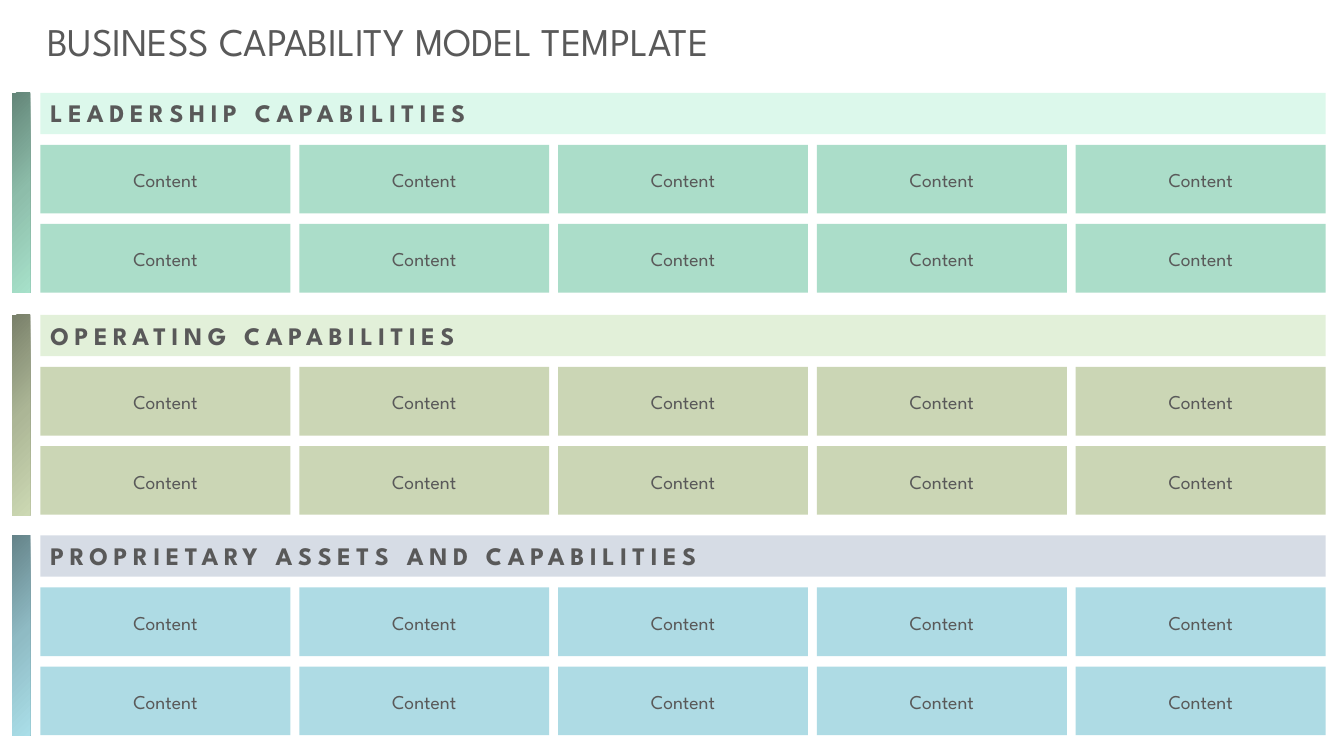
from lxml.etree import SubElement
from pptx import Presentation
from pptx.dml.color import RGBColor
from pptx.enum.shapes import MSO_SHAPE as Preset
from pptx.enum.text import MSO_ANCHOR as Anchor, PP_ALIGN as Align
from pptx.oxml.ns import qn
from pptx.util import Pt

FONT = "League Spartan"
TEXT_COLOR = "595959"
COLUMNS, ROWS = 5, 2
CELL_WIDTH, CELL_HEIGHT = 178.5, 49
ROW_PITCH = 56.5
HEADER_HEIGHT, CELLS_OFFSET = 29.5, 37.2
SECTION_LEFT, SECTION_WIDTH, SECTION_HEIGHT = 28.9, 918, 143
BAR_WIDTH, BAR_GAP = 13, 7.3

# Title, top, header fill, cell fill, gradient of the side bar
SECTIONS = [
    ("LEADERSHIP CAPABILITIES", 66.3, "DCF8EB", "ABDDC9",
     ("638578", "8DBDAA", "A7E1CA")),
    ("OPERATING CAPABILITIES", 224.9, "E2F0D9", "CBD6B5",
     ("79806A", "ACB696", "CCD8B3")),
    ("PROPRIETARY ASSETS AND CAPABILITIES", 382.4, "D6DCE5", "AEDBE4",
     ("658389", "8FBBC4", "AADEE8")),
]


def color(hex_string):
    return RGBColor.from_string(hex_string)


def write_text(shape, text, size, bold=False, letter_spacing=0,
               align=Align.LEFT, anchor=Anchor.MIDDLE):
    frame = shape.text_frame
    frame.word_wrap = True
    frame.vertical_anchor = anchor
    paragraph = frame.paragraphs[0]
    paragraph.alignment = align
    run = paragraph.add_run()
    run.text = text
    run.font.name = FONT
    run.font.size = Pt(size)
    run.font.bold = bold
    run.font.color.rgb = color(TEXT_COLOR)
    if letter_spacing:
        run.font._element.set("spc", str(letter_spacing * 100))
    return paragraph


def add_text_box(slide, left, top, width, height, text, size, **text_format):
    box = slide.shapes.add_textbox(Pt(left), Pt(top), Pt(width), Pt(height))
    write_text(box, text, size, anchor=Anchor.TOP, **text_format)


def add_rectangle(slide, left, top, width, height, fill=None):
    shape = slide.shapes.add_shape(
        Preset.RECTANGLE, Pt(left), Pt(top), Pt(width), Pt(height))
    shape.shadow.inherit = False
    shape.line.fill.background()
    if fill:
        shape.fill.solid()
        shape.fill.fore_color.rgb = color(fill)
    return shape


def add_gradient_bar(slide, left, top, width, height, stops):
    bar = add_rectangle(slide, left, top, width, height)
    bar.fill.gradient()
    bar.fill.gradient_angle = 315
    stop_list = next(bar._element.iter(qn("a:gsLst")))
    for stop in list(stop_list):
        stop_list.remove(stop)
    for index, hex_string in enumerate(stops):
        position = 100000 * index // (len(stops) - 1)
        stop = SubElement(stop_list, qn("a:gs"), pos=str(position))
        SubElement(stop, qn("a:srgbClr"), val=hex_string)


def add_cells(slide, left, top, width, fill):
    column_pitch = (width - CELL_WIDTH) / (COLUMNS - 1)
    for row in range(ROWS):
        for column in range(COLUMNS):
            cell = add_rectangle(
                slide, left + column * column_pitch, top + row * ROW_PITCH,
                CELL_WIDTH, CELL_HEIGHT, fill)
            paragraph = write_text(cell, "Content", 14, align=Align.CENTER)
            paragraph.line_spacing = 1.07
            paragraph.space_after = Pt(8)


def add_section(slide, left, top, width, height, title, header_fill,
                cell_fill, stops):
    # Side bar
    add_gradient_bar(slide, left - BAR_GAP - BAR_WIDTH, top,
                     BAR_WIDTH, height, stops)
    # Header band with its title
    add_rectangle(slide, left, top, width, HEADER_HEIGHT, header_fill)
    add_text_box(slide, left, top, width, HEADER_HEIGHT, title, 18,
                 bold=True, letter_spacing=4)
    # Grid of capabilities
    add_cells(slide, left, top + CELLS_OFFSET, width, cell_fill)


def build_capability_slide(presentation):
    slide = presentation.slides.add_slide(presentation.slide_layouts[6])
    add_text_box(slide, 26.6, 8.6, 918, 41,
                 "BUSINESS CAPABILITY MODEL TEMPLATE", 28)
    for title, top, header_fill, cell_fill, stops in SECTIONS:
        add_section(slide, SECTION_LEFT, top, SECTION_WIDTH, SECTION_HEIGHT,
                    title, header_fill, cell_fill, stops)


def main():
    presentation = Presentation()
    presentation.slide_width = Pt(960)
    presentation.slide_height = Pt(540)
    build_capability_slide(presentation)
    presentation.save("out.pptx")


if __name__ == "__main__":
    main()
